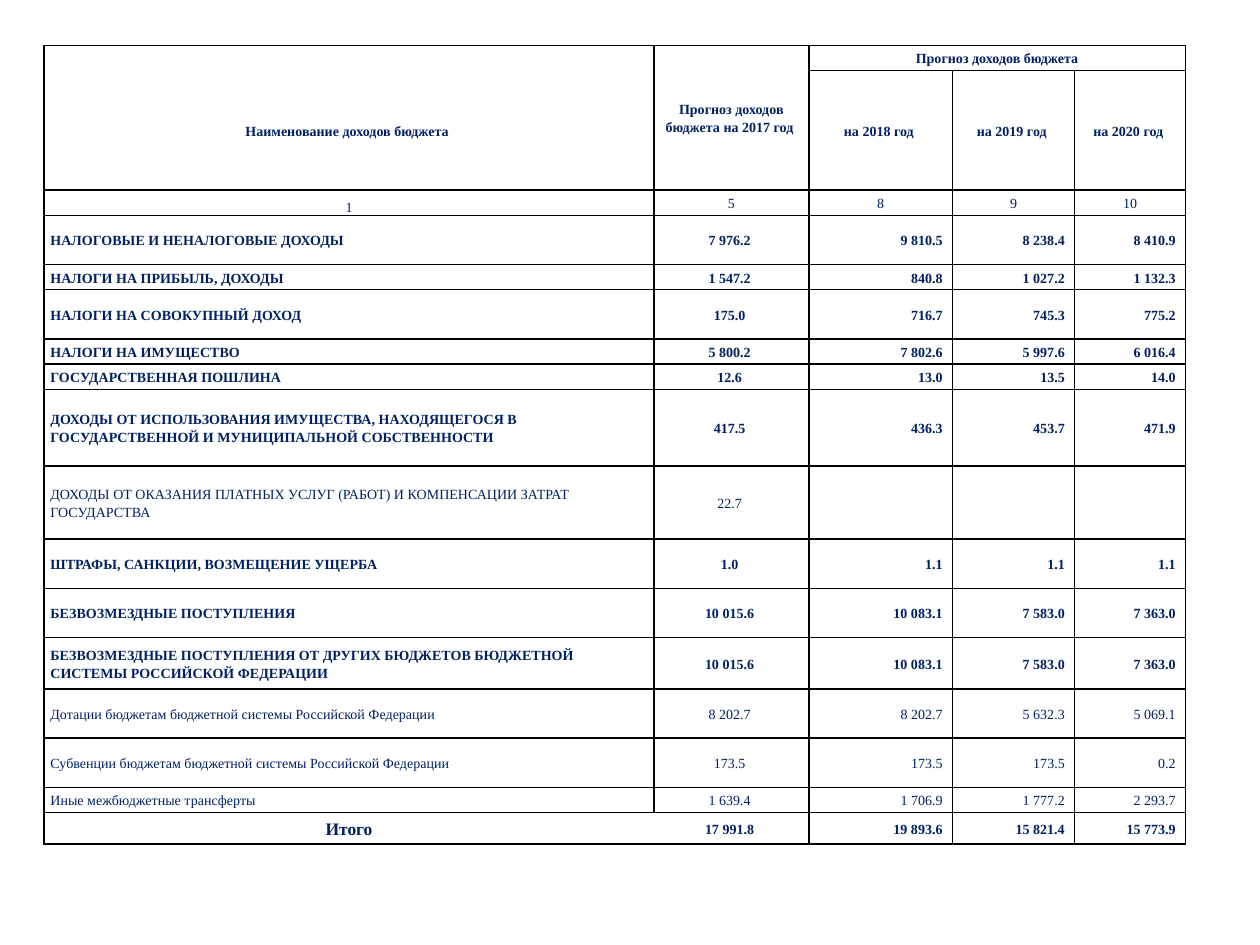
from lxml import etree
from pptx import Presentation
from pptx import util as u
from pptx.dml.color import RGBColor
from pptx.enum import text
from pptx.oxml import ns

LEFT, CENTER, RIGHT = (text.PP_ALIGN.LEFT, text.PP_ALIGN.CENTER,
                       text.PP_ALIGN.RIGHT)
MIDDLE, BOTTOM = text.MSO_ANCHOR.MIDDLE, text.MSO_ANCHOR.BOTTOM

COLUMN_WIDTHS = [4.84, 1.23, 1.14, 0.97, 0.88]
LINE, BLOCK = 0.2, 0.39  # heights of a one-line row and of a spaced row

# Row height, bold, name of the income, amounts for 2017 to 2020
INCOMES = [
    (BLOCK, True, "НАЛОГОВЫЕ И НЕНАЛОГОВЫЕ ДОХОДЫ",
     ["7 976.2", "9 810.5", "8 238.4", "8 410.9"]),
    (LINE, True, "НАЛОГИ НА ПРИБЫЛЬ, ДОХОДЫ",
     ["1 547.2", "840.8", "1 027.2", "1 132.3"]),
    (BLOCK, True, "НАЛОГИ НА СОВОКУПНЫЙ ДОХОД",
     ["175.0", "716.7", "745.3", "775.2"]),
    (LINE, True, "НАЛОГИ НА ИМУЩЕСТВО",
     ["5 800.2", "7 802.6", "5 997.6", "6 016.4"]),
    (LINE, True, "ГОСУДАРСТВЕННАЯ ПОШЛИНА",
     ["12.6", "13.0", "13.5", "14.0"]),
    (0.61, True, "ДОХОДЫ ОТ ИСПОЛЬЗОВАНИЯ ИМУЩЕСТВА, НАХОДЯЩЕГОСЯ В "
     "ГОСУДАРСТВЕННОЙ И МУНИЦИПАЛЬНОЙ СОБСТВЕННОСТИ",
     ["417.5", "436.3", "453.7", "471.9"]),
    (0.58, False, "ДОХОДЫ ОТ ОКАЗАНИЯ ПЛАТНЫХ УСЛУГ (РАБОТ) И КОМПЕНСАЦИИ "
     "ЗАТРАТ ГОСУДАРСТВА", ["22.7", "", "", ""]),
    (BLOCK, True, "ШТРАФЫ, САНКЦИИ, ВОЗМЕЩЕНИЕ УЩЕРБА",
     ["1.0", "1.1", "1.1", "1.1"]),
    (BLOCK, True, "БЕЗВОЗМЕЗДНЫЕ ПОСТУПЛЕНИЯ",
     ["10 015.6", "10 083.1", "7 583.0", "7 363.0"]),
    (0.41, True, "БЕЗВОЗМЕЗДНЫЕ ПОСТУПЛЕНИЯ ОТ ДРУГИХ БЮДЖЕТОВ БЮДЖЕТНОЙ "
     "СИСТЕМЫ РОССИЙСКОЙ ФЕДЕРАЦИИ",
     ["10 015.6", "10 083.1", "7 583.0", "7 363.0"]),
    (BLOCK, False, "Дотации бюджетам бюджетной системы Российской Федерации",
     ["8 202.7", "8 202.7", "5 632.3", "5 069.1"]),
    (BLOCK, False, "Субвенции бюджетам бюджетной системы Российской Федерации",
     ["173.5", "173.5", "173.5", "0.2"]),
    (LINE, False, "Иные межбюджетные трансферты",
     ["1 639.4", "1 706.9", "1 777.2", "2 293.7"]),
    (0.25, True, "Итого", ["17 991.8", "19 893.6", "15 821.4", "15 773.9"]),
]
HEADER_HEIGHTS = [LINE, 0.95, LINE]


def color(value):
    return RGBColor.from_string(value)


class BudgetSlide:
    font, size, ink = "Times New Roman", 8, "002060"
    paper, rule = "FFFFFF", "000000"

    def __init__(self, presentation):
        self.slide = presentation.slides.add_slide(presentation.slide_layouts[6])

    def table(self, left, top, widths, heights):
        frame = self.slide.shapes.add_table(
            len(heights), len(widths), u.Inches(left), u.Inches(top),
            u.Inches(sum(widths)), u.Inches(sum(heights)))
        table = frame.table
        table.first_row = table.horz_banding = False
        for column, width in zip(table.columns, widths):
            column.width = u.Inches(width)
        for row, height in zip(table.rows, heights):
            row.height = u.Inches(height)
        return table

    def frame_cell(self, cell, open_sides=""):
        """Rule every side of a cell except the open ones, then fill it."""
        properties = cell._tc.get_or_add_tcPr()
        for side in "LRTB":
            line = etree.SubElement(properties, ns.qn("a:ln" + side),
                                    w=str(u.Pt(1)))
            if side in open_sides:
                etree.SubElement(line, ns.qn("a:noFill"))
            else:
                fill = etree.SubElement(line, ns.qn("a:solidFill"))
                etree.SubElement(fill, ns.qn("a:srgbClr"), val=self.rule)
        cell.fill.solid()
        cell.fill.fore_color.rgb = color(self.paper)
        cell.margin_left = cell.margin_right = u.Inches(0.05)
        cell.margin_top = cell.margin_bottom = 0
        # Keeps an empty cell as low as a line of table text
        etree.SubElement(cell.text_frame.paragraphs[0]._p,
                         ns.qn("a:endParaRPr"), sz=str(self.size * 100))

    def cell_text(self, cell, wording, align=CENTER, bold=True, size=None,
                  anchor=MIDDLE):
        cell.vertical_anchor = anchor
        paragraph = cell.text_frame.paragraphs[0]
        paragraph.text = wording
        paragraph.alignment, paragraph.line_spacing = align, 1.15
        for run in paragraph.runs:
            run.font.name, run.font.bold = self.font, bold
            run.font.size = u.Pt(size or self.size)
            run.font.color.rgb = color(self.ink)


def main():
    presentation = Presentation()
    presentation.slide_width, presentation.slide_height = u.Inches(10), u.Inches(7.5)
    page = BudgetSlide(presentation)
    heights = HEADER_HEIGHTS + [income[0] for income in INCOMES]
    table = page.table(0.35, 0.36, COLUMN_WIDTHS, heights)

    # Rules: the name heading and the total row each have an open joint
    last = len(heights) - 1
    joints = {(0, 0): "B", (1, 0): "T", (last, 0): "R", (last, 1): "L"}
    for row in range(len(heights)):
        for column in range(len(COLUMN_WIDTHS)):
            page.frame_cell(table.cell(row, column), joints.get((row, column), ""))

    # Headings
    table.cell(0, 1).merge(table.cell(1, 1))
    table.cell(0, 2).merge(table.cell(0, 4))
    page.cell_text(table.cell(0, 1), "Прогноз доходов бюджета на 2017 год ")
    page.cell_text(table.cell(0, 2), "Прогноз доходов бюджета")
    page.cell_text(table.cell(1, 0), "Наименование доходов бюджета ")
    for column, year in enumerate([2018, 2019, 2020], 2):
        page.cell_text(table.cell(1, column), f"на {year} год ")
    for column, number in enumerate([1, 5, 8, 9, 10]):
        page.cell_text(table.cell(2, column), str(number), bold=False,
                       anchor=MIDDLE if column else BOTTOM)

    # Incomes and total
    for row, (_, bold, name, amounts) in enumerate(INCOMES, len(HEADER_HEIGHTS)):
        total = row == last
        page.cell_text(table.cell(row, 0), name, CENTER if total else LEFT, bold,
                       10 if total else None)
        for column, amount in enumerate(amounts, 1):
            if amount:
                page.cell_text(table.cell(row, column), amount + " ",
                               CENTER if column == 1 else RIGHT, bold)

    presentation.save("out.pptx")


if __name__ == "__main__":
    main()
